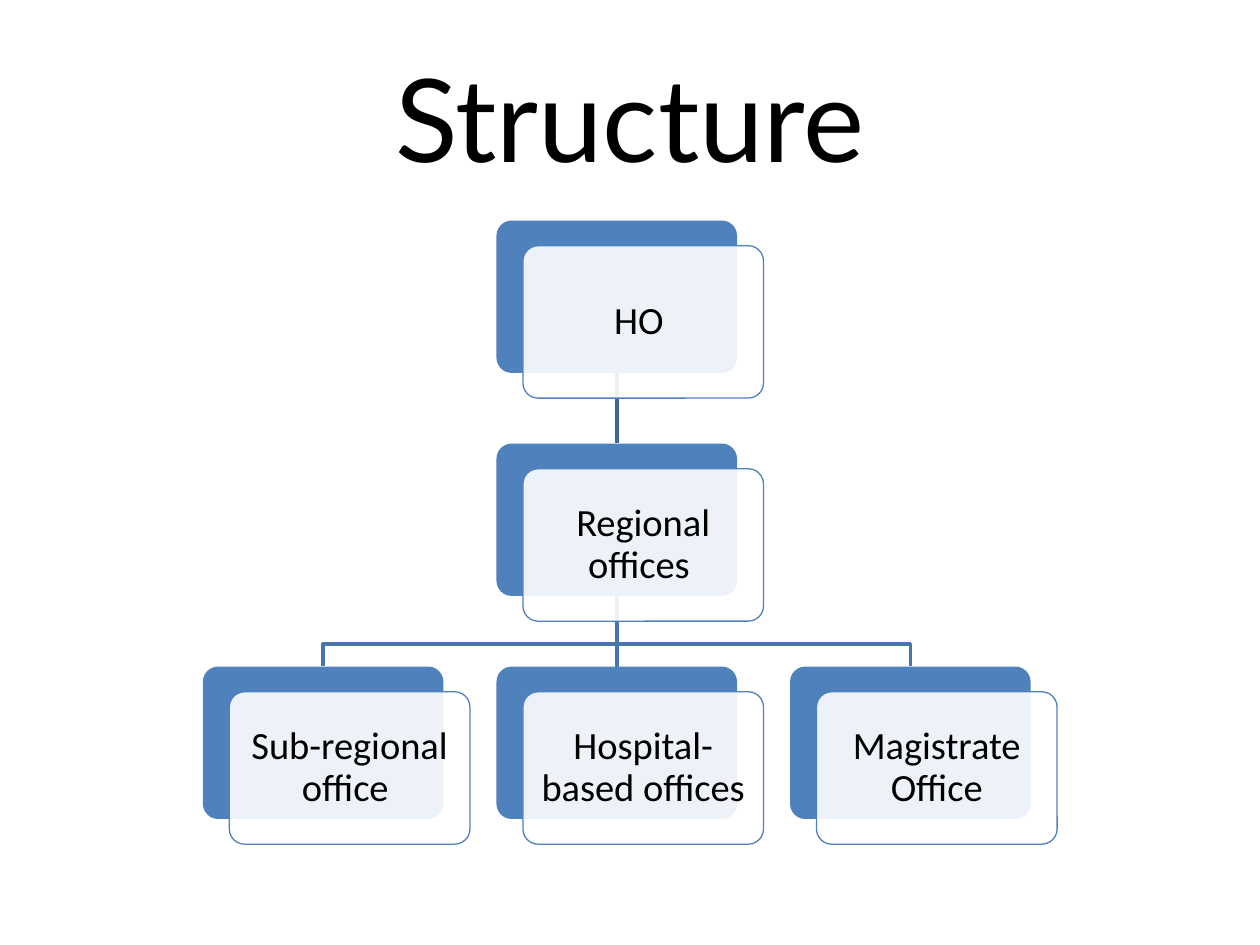
from lxml import etree
from pptx import Presentation
from pptx import util as u
from pptx.dml.color import RGBColor
from pptx.enum import shapes, text
from pptx.oxml.ns import qn

BLUE = RGBColor(0x4F, 0x81, 0xBD)
UPPER_LINK = RGBColor(0x3F, 0x67, 0x97)
LOWER_LINK = RGBColor(0x48, 0x75, 0xAC)
WHITE = RGBColor(0xFF, 0xFF, 0xFF)
BLACK = RGBColor(0, 0, 0)

CARD_W, CARD_H = 1.91, 1.21
COL_STEP, ROW_STEP = 2.33, 1.77
OFFSET_X, OFFSET_Y = 0.21, 0.2
ELBOW = 0.68
LEVELS = [
    [(1, "HO ")],
    [(1, "Regional offices ")],
    [(0, "Sub-regional office "), (1, "Hospital-based offices "), (2, "Magistrate Office")],
]


def add_title(slide, title, box):
    """Fill the title placeholder within the given box."""
    sp = slide.shapes.title
    sp.left, sp.top, sp.width, sp.height = (u.Inches(n) for n in box)
    tf = sp.text_frame
    tf.text = title
    tf.auto_size = text.MSO_AUTO_SIZE.NONE
    tf.vertical_anchor = text.MSO_ANCHOR.MIDDLE
    p = tf.paragraphs[0]
    p.alignment = text.PP_ALIGN.CENTER
    p.font.size, p.font.name = u.Pt(66), "Lato"
    p.font.color.rgb = BLACK


def add_panel(slide, x, y, fill):
    """Add one rounded panel of card size."""
    sp = slide.shapes.add_shape(
        shapes.MSO_SHAPE.ROUNDED_RECTANGLE,
        u.Inches(x), u.Inches(y), u.Inches(CARD_W), u.Inches(CARD_H))
    sp.adjustments[0] = 0.1
    sp.shadow.inherit = False
    sp.fill.solid()
    sp.fill.fore_color.rgb = fill
    sp.line.fill.background()
    return sp


def add_card(slide, x, y, label):
    """Add a blue panel with a translucent labelled panel in front."""
    add_panel(slide, x, y, BLUE)
    sp = add_panel(slide, x + OFFSET_X, y + OFFSET_Y, WHITE)
    color = sp.fill._xPr.find(qn("a:solidFill"))[0]
    etree.SubElement(color, qn("a:alpha"), val="90000")
    sp.line.color.rgb, sp.line.width = BLUE, u.Pt(0.75)
    tf = sp.text_frame
    tf.word_wrap = True
    tf.vertical_anchor = text.MSO_ANCHOR.MIDDLE
    tf.margin_left = tf.margin_right = tf.margin_top = tf.margin_bottom = u.Inches(0.09)
    tf.text = label
    p = tf.paragraphs[0]
    p.alignment, p.line_spacing = text.PP_ALIGN.CENTER, 0.9
    p.font.size, p.font.name = u.Pt(22), "Calibri"
    p.font.color.rgb = BLACK


def add_link(slide, start, end, color):
    """Join two cards with a straight line or a stepped one."""
    x1, y1, x2, y2 = (u.Inches(n) for n in (*start, *end))
    if x1 == x2:
        sp = slide.shapes.add_connector(shapes.MSO_CONNECTOR.STRAIGHT, x1, y1, x2, y2)
        etree.SubElement(sp._element.spPr, qn("a:effectLst"))
    else:
        bend = round(y1 + ELBOW * (y2 - y1))
        builder = slide.shapes.build_freeform(x1, y1)
        builder.add_line_segments([(x1, bend), (x2, bend), (x2, y2)], close=False)
        sp = builder.convert_to_shape()
        sp.fill.background()
        sp.shadow.inherit = False
    sp.line.color.rgb, sp.line.width = color, u.Pt(2)


def add_hierarchy(slide, left, top):
    """Draw the links and then the cards from the given corner."""
    middle = left + COL_STEP + CARD_W / 2
    for row, color in ((1, UPPER_LINK), (2, LOWER_LINK)):
        y = top + row * ROW_STEP
        for col, _ in LEVELS[row]:
            x = middle + (col - 1) * COL_STEP
            add_link(slide, (middle, y - ROW_STEP + CARD_H), (x, y), color)
    for row, level in enumerate(LEVELS):
        for col, label in level:
            add_card(slide, left + col * COL_STEP, top + row * ROW_STEP, label)


def main():
    """Build the slide and save it."""
    prs = Presentation()
    prs.slide_width, prs.slide_height = u.Inches(10), u.Inches(7.5)
    s = prs.slides.add_slide(prs.slide_layouts[5])
    add_title(s, "Structure", (0.5, 0.3, 9, 1.25))
    add_hierarchy(s, 1.61, 1.75)
    prs.save("out.pptx")


if __name__ == "__main__":
    main()
